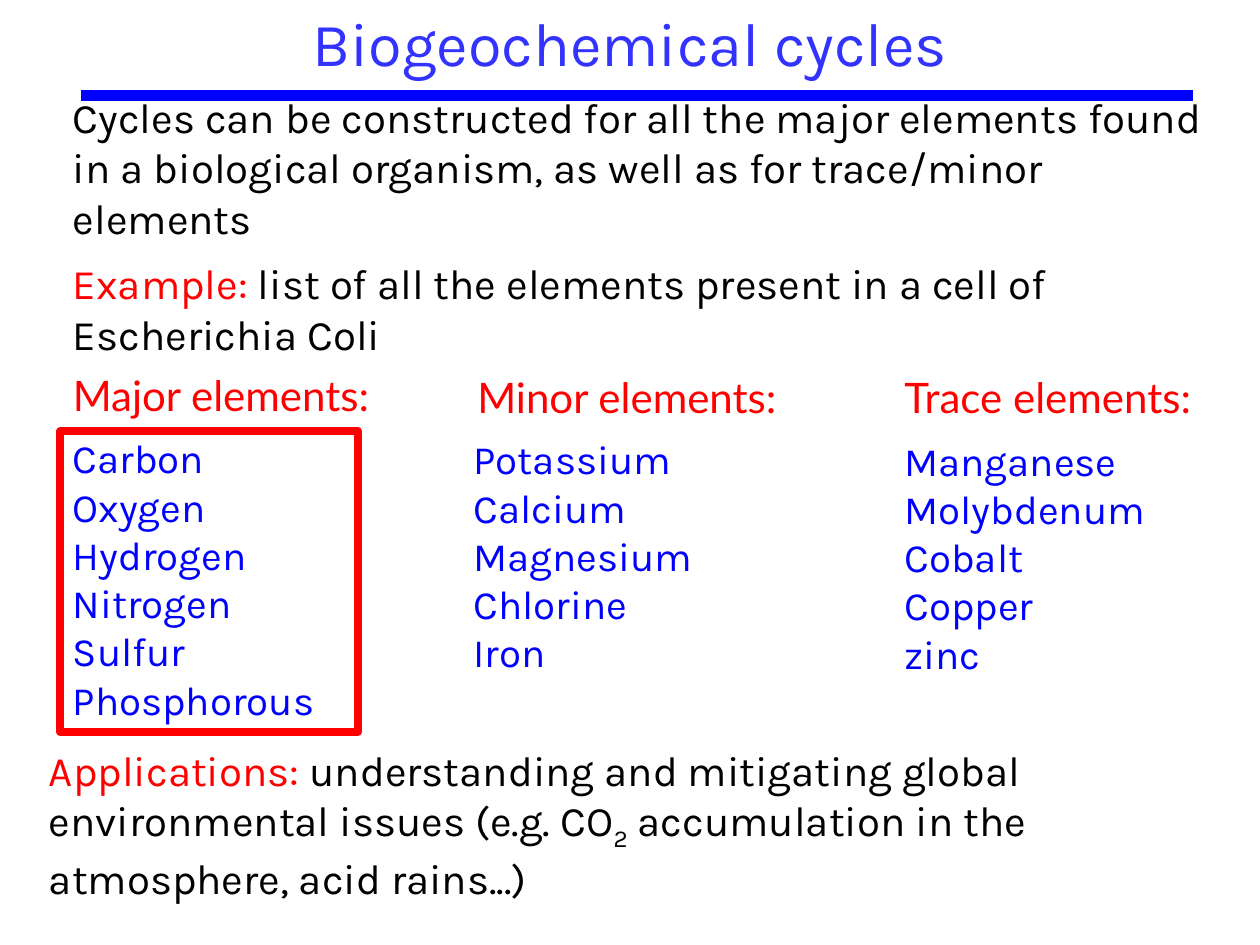
from pptx import Presentation
from pptx.dml.color import RGBColor
from pptx.enum.shapes import MSO_CONNECTOR, MSO_SHAPE
from pptx.enum.text import MSO_ANCHOR, MSO_AUTO_SIZE, PP_ALIGN
from pptx.oxml.ns import qn
from pptx.util import Inches, Pt
from lxml.etree import SubElement

BLACK = RGBColor(0x00, 0x00, 0x00)
RED = RGBColor(0xFF, 0x00, 0x00)
BLUE = RGBColor(0x00, 0x00, 0xFF)
VIOLET = RGBColor(0x33, 0x33, 0xFF)

COLUMNS, ROWS = 100, 75
LINE_ROWS, PADDING_ROWS = 3.87, 1

TITLE = {"name": "Karla", "size": Pt(35)}
BODY = {"name": "Karla", "size": Pt(24)}
HEADING = {"name": "Lato", "size": Pt(24)}
LISTING = {"name": "Karla", "size": Pt(23)}
GROWING = {"auto_size": MSO_AUTO_SIZE.SHAPE_TO_FIT_TEXT}
CENTRED = {**GROWING, "vertical_anchor": MSO_ANCHOR.MIDDLE}

ELEMENTS = [
    ("Major elements:", 4.8, 28.8, 4.8, 33.8,
     ["Carbon", "Oxygen", "Hydrogen", "Nitrogen", "Sulfur", "Phosphorous"]),
    ("Minor elements:", 36.9, 29, 36.6, 33.9,
     ["Potassium", "Calcium", "Magnesium", "Chlorine", "Iron"]),
    ("Trace elements:", 70.8, 29, 70.8, 34,
     ["Manganese", "Molybdenum", "Cobalt", "Copper", "zinc"]),
]


def apply(target, values):
    for name, value in values.items():
        setattr(target, name, value)


class SlideBuilder:
    def __init__(self, deck):
        self.page = deck.slides.add_slide(deck.slide_layouts[6])
        self.column = deck.slide_width / COLUMNS
        self.row = deck.slide_height / ROWS

    def place(self, left, top, width, height):
        return (round(left * self.column), round(top * self.row),
                round(width * self.column), round(height * self.row))

    def text(self, area, paragraphs, font, frame=GROWING, alignment=PP_ALIGN.LEFT):
        box = self.page.shapes.add_textbox(*self.place(*area))
        apply(box.text_frame, {"word_wrap": True, **frame})
        for index, spans in enumerate(paragraphs):
            para = box.text_frame.add_paragraph() if index else box.text_frame.paragraphs[0]
            para.alignment = alignment
            for words, color, *baseline in spans:
                span = para.add_run()
                span.text = words
                apply(span.font, font)
                span.font.color.rgb = color
                for offset in baseline:
                    span._r.get_or_add_rPr().set("baseline", str(offset))

    def rule(self, left, right, row, color, width):
        start, level, end, _ = self.place(left, row, right, 0)
        line = self.page.shapes.add_connector(MSO_CONNECTOR.STRAIGHT, start, level, end, level)
        line.line.color.rgb = color
        line.line.width = Pt(width)
        SubElement(line._element.spPr, qn("a:effectLst"))

    def frame(self, area, color, width):
        shape = self.page.shapes.add_shape(MSO_SHAPE.RECTANGLE, *self.place(*area))
        shape.shadow.inherit = False
        shape.fill.background()
        shape.line.color.rgb = color
        shape.line.width = Pt(width)
        SubElement(shape.line._get_or_add_ln(), qn("a:round"))


def main():
    deck = Presentation()
    apply(deck, {"slide_width": Inches(10), "slide_height": Inches(7.5)})
    slide = SlideBuilder(deck)

    slide.text((1.3, -0.1, 97.4, 7.6), [[("Biogeochemical cycles", VIOLET)]],
               TITLE, {}, PP_ALIGN.CENTER)
    slide.rule(6.4, 94.7, 7.6, BLUE, 6)
    slide.text((4.8, 8.7, 93.9, 9.1), [[
        ("Cycles can be constructed for all the major elements found in a "
         "biological organism, as well as for trace/minor elements", BLACK),
    ]], BODY, CENTRED)
    slide.text((4.8, 19.9, 93.9, 9.1), [[
        ("Example: ", RED),
        ("list of all the elements present in a cell of Escherichia Coli", BLACK),
    ]], BODY, CENTRED)

    for heading, heading_left, heading_top, left, top, names in ELEMENTS:
        slide.text((heading_left, heading_top, 31.7, 5.2), [[(heading, RED)]], HEADING)
        height = PADDING_ROWS + LINE_ROWS * len(names)
        slide.text((left, top, 23.6, height), [[(name, BLUE)] for name in names],
                   LISTING, CENTRED)

    slide.text((2.9, 60.8, 97.7, 9.1), [[
        ("Applications: ", RED),
        ("understanding and mitigating global environmental issues (e.g. CO", BLACK),
        ("2", BLACK, -25000),
        (" accumulation in the atmosphere, acid rains...)", BLACK),
    ]], BODY, CENTRED)
    slide.frame((4.8, 34.2, 23.6, 23.9), RED, 4.5)
    deck.save("out.pptx")


if __name__ == "__main__":
    main()
